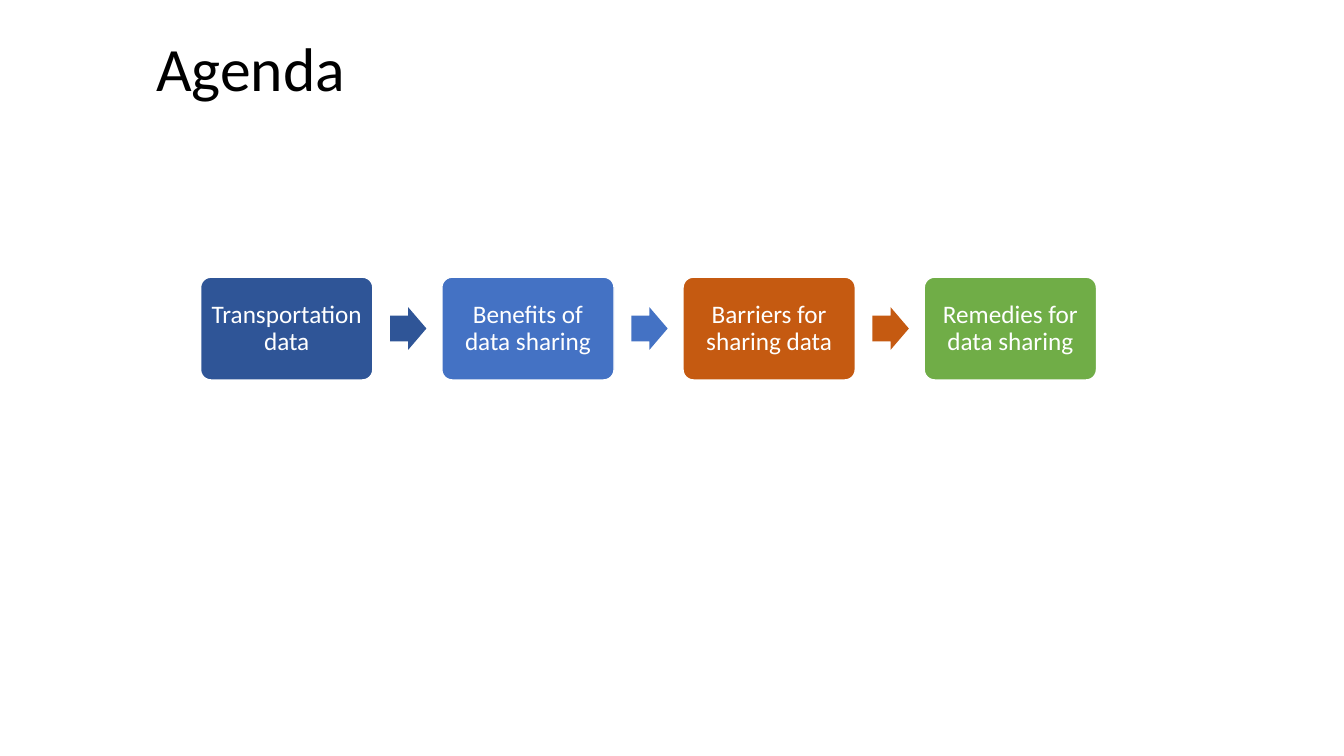
from dataclasses import dataclass

from pptx import Presentation
from pptx.dml.color import RGBColor
from pptx.enum.shapes import MSO_SHAPE
from pptx.enum.text import MSO_ANCHOR, PP_ALIGN
from pptx.util import Pt


@dataclass(frozen=True)
class Theme:
    font: str = "Calibri"
    title_size: int = 44
    step_size: int = 18
    black: str = "000000"
    white: str = "FFFFFF"
    navy: str = "2F5597"
    blue: str = "4472C4"
    orange: str = "C55A11"
    green: str = "70AD47"


THEME = Theme()
STEPS = [
    ("Transportation data", THEME.navy),
    ("Benefits of data sharing", THEME.blue),
    ("Barriers for sharing data", THEME.orange),
    ("Remedies for data sharing", THEME.green),
]
STEP_LEFT, STEP_TOP, STEP_W, STEP_H = 143.3, 198, 123, 73.4
STEP_PITCH = 172.3
ARROW_OFFSET, ARROW_W, ARROW_H = 135.3, 26, 30.4


def write(tf, text, size, color, align):
    tf.text = text
    tf.word_wrap = True
    tf.vertical_anchor = MSO_ANCHOR.MIDDLE
    p = tf.paragraphs[0]
    p.alignment = align
    p.line_spacing = 0.9
    r = p.runs[0]
    r.font.name = THEME.font
    r.font.size = Pt(size)
    r.font.color.rgb = RGBColor.from_string(color)


def add_title(s, text):
    sp = s.shapes.add_textbox(Pt(104.4), Pt(14.4), Pt(790), Pt(72.7))
    write(sp.text_frame, text, THEME.title_size, THEME.black, PP_ALIGN.LEFT)


def add_filled(s, kind, left, top, width, height, color, adjustments):
    sp = s.shapes.add_shape(kind, Pt(left), Pt(top), Pt(width), Pt(height))
    sp.shadow.inherit = False
    sp.fill.solid()
    sp.fill.fore_color.rgb = RGBColor.from_string(color)
    for i, value in enumerate(adjustments):
        sp.adjustments[i] = value
    return sp


def add_step(s, left, text, color):
    sp = add_filled(s, MSO_SHAPE.ROUNDED_RECTANGLE, left, STEP_TOP,
                    STEP_W, STEP_H, color, [0.1])
    sp.line.color.rgb = RGBColor.from_string(THEME.white)
    sp.line.width = Pt(1)
    tf = sp.text_frame
    tf.margin_left = tf.margin_right = Pt(5)
    tf.margin_top = tf.margin_bottom = Pt(5)
    write(tf, text, THEME.step_size, THEME.white, PP_ALIGN.CENTER)


def add_arrow(s, left, color):
    top = STEP_TOP + (STEP_H - ARROW_H) / 2
    sp = add_filled(s, MSO_SHAPE.RIGHT_ARROW, left, top,
                    ARROW_W, ARROW_H, color, [0.6, 0.5])
    sp.line.fill.background()


def main():
    prs = Presentation()
    prs.slide_width, prs.slide_height = Pt(960), Pt(540)
    s = prs.slides.add_slide(prs.slide_layouts[6])
    add_title(s, "Agenda")
    for i, (text, color) in enumerate(STEPS):
        left = STEP_LEFT + i * STEP_PITCH
        add_step(s, left, text, color)
        if i < len(STEPS) - 1:
            add_arrow(s, left + ARROW_OFFSET, color)
    prs.save("out.pptx")


if __name__ == "__main__":
    main()
